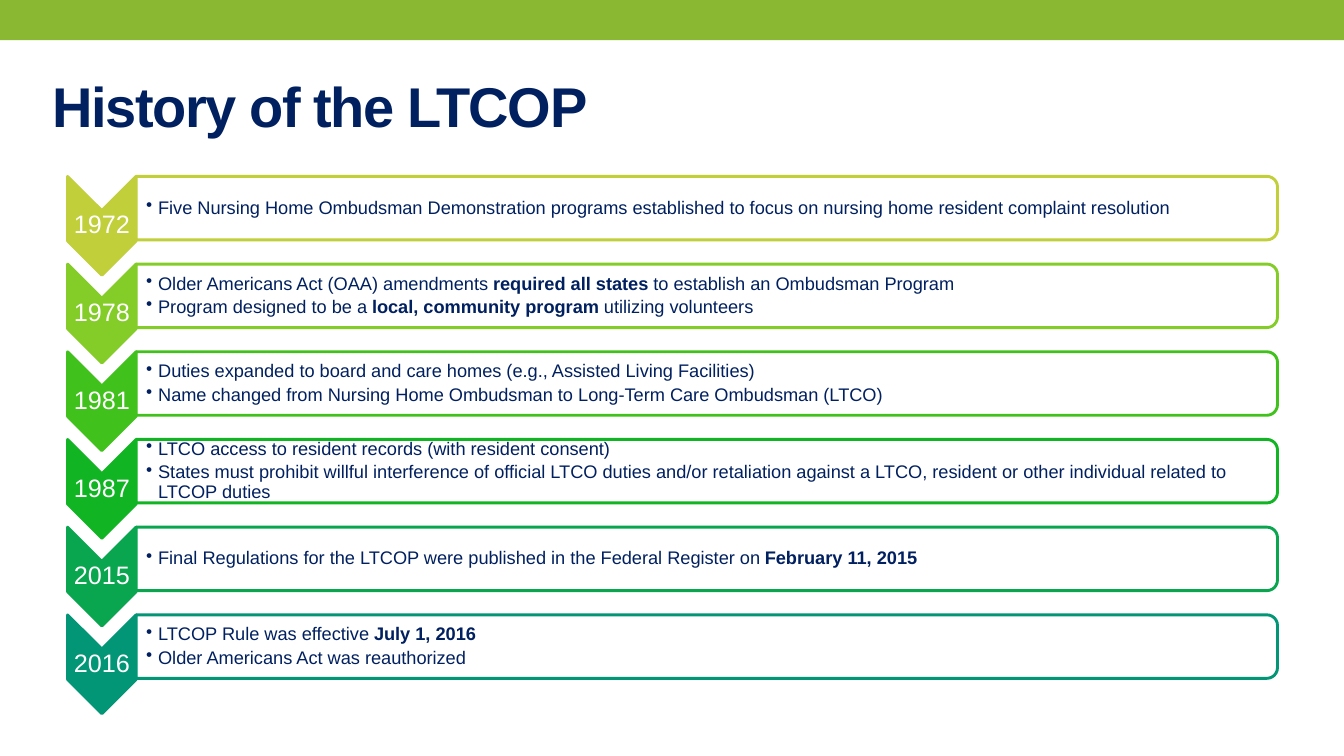
from lxml.etree import SubElement
from pptx import Presentation
from pptx.dml.color import RGBColor
from pptx.enum.shapes import MSO_SHAPE as Shape
from pptx.enum.text import MSO_ANCHOR as Anchor, PP_ALIGN as Align
from pptx.oxml.ns import qn
from pptx.util import Inches, Pt

SLIDE_W, SLIDE_H = 13.33, 7.5
FONT = "Arial"
COLORS = {
    "band": "8AB833", "navy": "002060", "white": "FFFFFF",
    "1972": "C0CF3A", "1978": "84CC27", "1981": "40C11B",
    "1987": "11B423", "2015": "09A64F", "2016": "029676",
}

ROW_TOP, ROW_PITCH = 1.75, 0.87
YEAR_LEFT, YEAR_W, YEAR_H = 0.67, 0.68, 0.98
BOX_LEFT, BOX_W, BOX_H = YEAR_LEFT + YEAR_W, 11.32, 0.63
INSET, LINE_SPACING = 0.01, 0.9

TIMELINE = {
    "1972": [[("Five Nursing Home Ombudsman Demonstration programs established "
               "to focus on nursing home resident complaint resolution", False)]],
    "1978": [[("Older Americans Act (OAA) amendments ", False),
              ("required all states ", True),
              ("to establish an Ombudsman Program", False)],
             [("Program designed to be a ", False),
              ("local, community program ", True),
              ("utilizing volunteers", False)]],
    "1981": [[("Duties expanded to board and care homes "
               "(e.g., Assisted Living Facilities)", False)],
             [("Name changed from Nursing Home Ombudsman to "
               "Long-Term Care Ombudsman (LTCO)", False)]],
    "1987": [[("LTCO access to resident records (with resident consent)", False)],
             [("States must prohibit willful interference of official LTCO duties "
               "and/or retaliation against a LTCO, resident or other individual "
               "related to LTCOP duties", False)]],
    "2015": [[("Final Regulations for the LTCOP were published in the "
               "Federal Register on ", False),
              ("February 11, 2015", True)]],
    "2016": [[("LTCOP Rule was effective ", False), ("July 1, 2016", True)],
             [("Older Americans Act was reauthorized", False)]],
}


def rgb(name):
    return RGBColor.from_string(COLORS[name])


def add_shape(slide, kind, left, top, width, height, fill, line=None):
    sp = slide.shapes.add_shape(kind, *map(Inches, (left, top, width, height)))
    sp.shadow.inherit = False
    sp.fill.solid()
    sp.fill.fore_color.rgb = rgb(fill)
    if line:
        sp.line.color.rgb = rgb(line)
        sp.line.width = Pt(2.08)
    else:
        sp.line.fill.background()
    return sp


def add_turned(slide, kind, left, top, width, height, fill, line):
    shift = (width - height) / 2
    sp = add_shape(slide, kind, left + shift, top - shift, height, width, fill, line)
    sp.rotation = 90
    return sp


def add_text_frame(slide, left, top, width, height, insets=None):
    box = slide.shapes.add_textbox(*map(Inches, (left, top, width, height)))
    tf = box.text_frame
    tf.word_wrap = True
    tf.vertical_anchor = Anchor.MIDDLE
    if insets:
        tf.margin_left, tf.margin_top, tf.margin_right, tf.margin_bottom = map(
            Inches, insets)
    return tf


def set_font(p, size, color, bold=None):
    p.font.name = FONT
    p.font.size = Pt(size)
    p.font.color.rgb = rgb(color)
    p.font.bold = bold


def set_bullet(p):
    pPr = p._p.get_or_add_pPr()
    pPr.set("marL", str(Inches(0.12)))
    pPr.set("indent", str(-Inches(0.12)))
    bullet = pPr.makeelement(qn("a:buChar"), {"char": "•"})
    pPr.insert_element_before(bullet, "a:tabLst", "a:defRPr", "a:extLst")


def add_title(slide, text):
    p = add_text_frame(slide, 0.42, 0.5, 12, 1.08).paragraphs[0]
    r = p.add_run()
    r.text = text
    set_font(p, 40, "navy", True)
    r.font._element.set("spc", "-100")


def add_year(slide, year, top):
    add_turned(slide, Shape.CHEVRON, YEAR_LEFT, top, YEAR_W, YEAR_H, year, year)
    tf = add_text_frame(slide, YEAR_LEFT, top + YEAR_W / 2, YEAR_W,
                        YEAR_H - YEAR_W, [INSET] * 4)
    p = tf.paragraphs[0]
    p.text = year
    p.alignment = Align.CENTER
    p.line_spacing = LINE_SPACING
    set_font(p, 18, "white")


def add_events(slide, year, events, top):
    sp = add_turned(slide, Shape.ROUND_2_SAME_RECTANGLE, BOX_LEFT, top,
                    BOX_W, BOX_H, "white", year)
    white = sp.fill._xPr.find(qn("a:solidFill"))[0]
    SubElement(white, qn("a:alpha"), val="90000")
    tf = add_text_frame(slide, BOX_LEFT, top + 0.03, BOX_W - 0.03, BOX_H - 0.06,
                        [0.1] + [INSET] * 3)
    for i, runs in enumerate(events):
        p = tf.add_paragraph() if i else tf.paragraphs[0]
        p.line_spacing = LINE_SPACING
        p.space_after = Pt(2.5)
        set_bullet(p)
        set_font(p, 13, "navy")
        for text, bold in runs:
            r = p.add_run()
            r.text = text
            r.font.bold = bold


def main():
    prs = Presentation()
    prs.slide_width, prs.slide_height = Inches(SLIDE_W), Inches(SLIDE_H)
    slide = prs.slides.add_slide(prs.slide_layouts[6])
    add_shape(slide, Shape.RECTANGLE, 0, 0, SLIDE_W, 0.4, "band")
    add_title(slide, "History of the LTCOP")
    for i, (year, events) in enumerate(TIMELINE.items()):
        top = ROW_TOP + i * ROW_PITCH
        add_year(slide, year, top)
        add_events(slide, year, events, top)
    prs.save("out.pptx")


if __name__ == "__main__":
    main()
